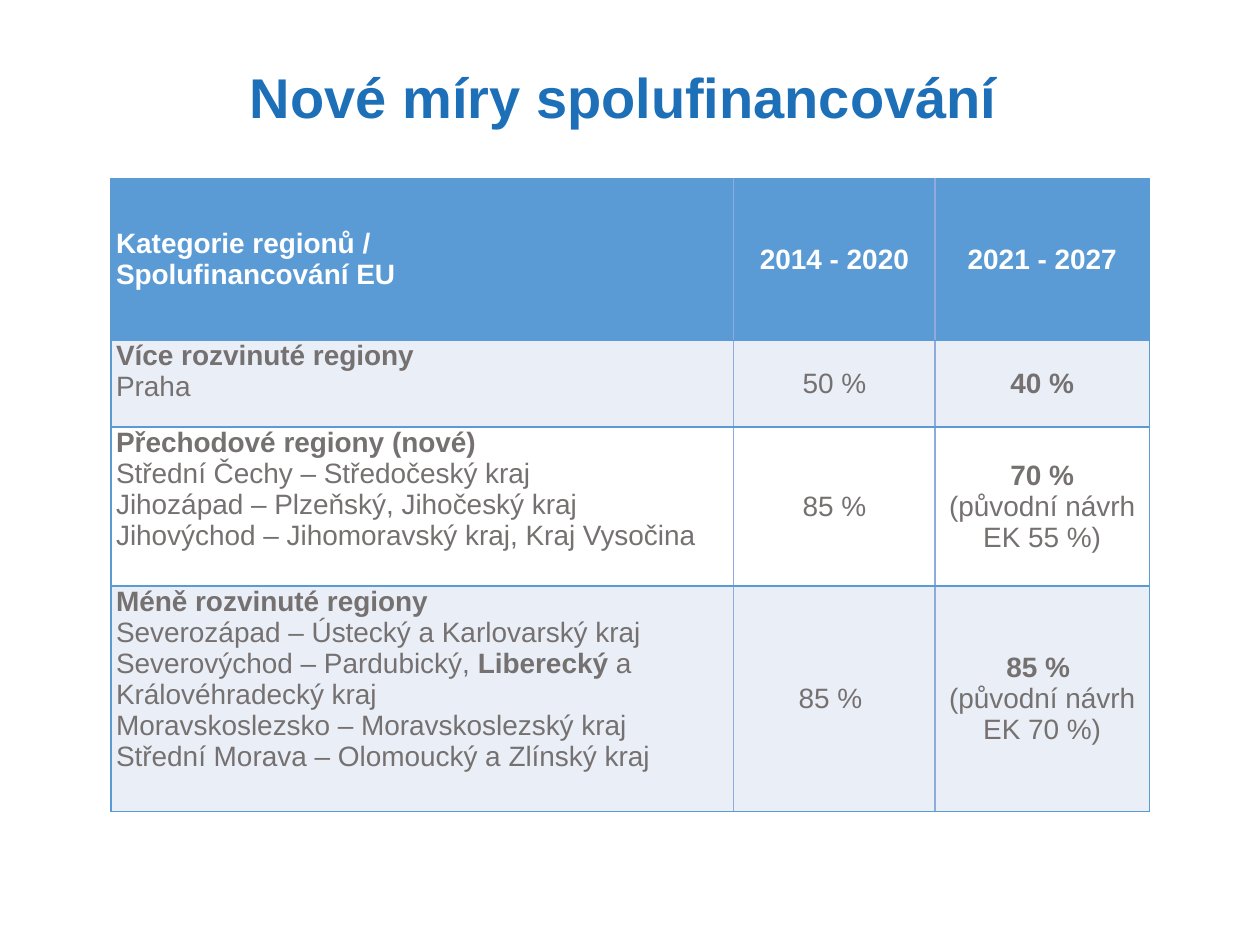
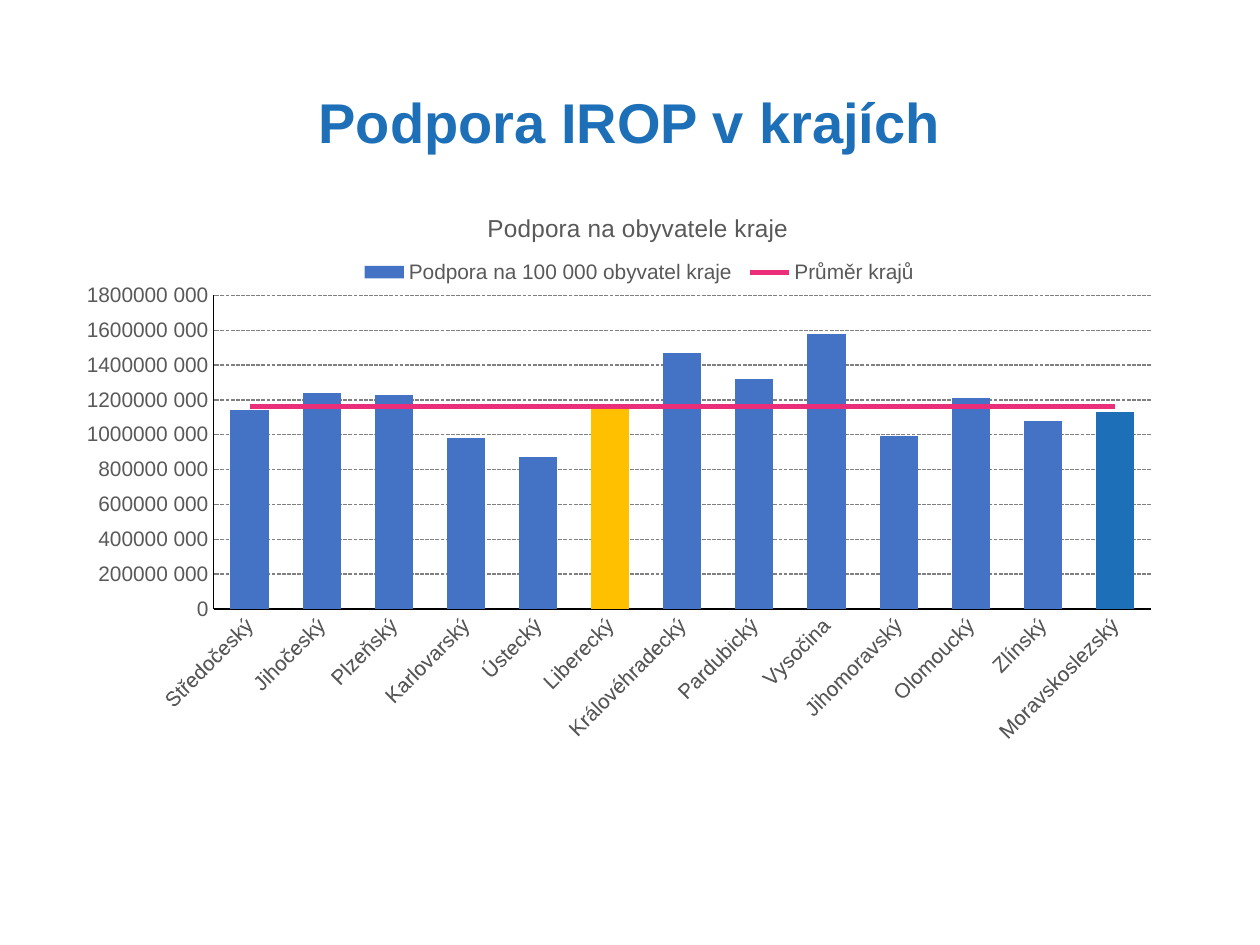
from dataclasses import dataclass

import pptx
import pptx.chart.data
import pptx.dml.color
import pptx.enum.chart
import pptx.enum.dml
import pptx.enum.text
import pptx.oxml
import pptx.oxml.ns
import pptx.util
from pptx.util import Cm

FONT = "Arial"
COLORS = {
    "title": "1D70B8",
    "header": "5B9BD5",
    "divider": "8FAADC",
    "band": "EAEFF7",
    "white": "FFFFFF",
    "body": "767171",
    "label": "595959",
    "black": "000000",
    "grid": "808080",
    "support": "4472C4",
    "liberecky": "FFC000",
    "average": "EA2E7A",
}
LEFT = pptx.enum.text.PP_ALIGN.LEFT
CENTER = pptx.enum.text.PP_ALIGN.CENTER
TOP = pptx.enum.text.MSO_ANCHOR.TOP
MIDDLE = pptx.enum.text.MSO_ANCHOR.MIDDLE


@dataclass(frozen=True)
class Box:
    left: float
    top: float
    width: float
    height: float

    def lengths(self) -> tuple:
        return Cm(self.left), Cm(self.top), Cm(self.width), Cm(self.height)


@dataclass(frozen=True)
class Run:
    text: str
    bold: bool = False


@dataclass(frozen=True)
class RegionRow:
    height: float
    cells: tuple
    fill: str = "band"
    color: str = "body"
    anchor: pptx.enum.text.MSO_ANCHOR = TOP


REGION_COLUMNS = (12.55, 4.06, 4.32)
REGION_ROWS = (
    RegionRow(
        3.25,
        (
            (Run("Kategorie regionů /", True), Run("Spolufinancování EU", True)),
            (Run("2014 - 2020", True),),
            (Run("2021 - 2027", True),),
        ),
        fill="header", color="white", anchor=MIDDLE,
    ),
    RegionRow(
        1.75,
        (
            (Run("Více rozvinuté regiony", True), Run("Praha")),
            (Run("50 %"),),
            (Run("40 %", True),),
        ),
    ),
    RegionRow(
        3.2,
        (
            (
                Run("Přechodové regiony (nové)", True),
                Run("Střední Čechy – Středočeský kraj"),
                Run("Jihozápad – Plzeňský, Jihočeský kraj"),
                Run("Jihovýchod – Jihomoravský kraj, Kraj Vysočina"),
            ),
            (Run("85 %"),),
            (Run("70 %", True), Run("(původní návrh EK 55 %)")),
        ),
        fill="white",
    ),
    RegionRow(
        4.55,
        (
            (
                Run("Méně rozvinuté regiony", True),
                Run("Severozápad – Ústecký a Karlovarský kraj"),
                (
                    Run("Severovýchod – Pardubický, "),
                    Run("Liberecký ", True),
                    Run("a Královéhradecký kraj\nMoravskoslezsko – Moravskoslezský kraj"),
                ),
                Run("Střední Morava – Olomoucký a Zlínský kraj"),
            ),
            (Run("85 % "),),
            (Run("85 % ", True), Run("(původní návrh EK 70 %)")),
        ),
    ),
)

SUPPORT_BY_REGION = {
    "Středočeský": 1140000000,
    "Jihočeský": 1240000000,
    "Plzeňský": 1230000000,
    "Karlovarský": 980000000,
    "Ústecký": 870000000,
    "Liberecký": 1150000000,
    "Královéhradecký": 1470000000,
    "Pardubický": 1320000000,
    "Vysočina": 1580000000,
    "Jihomoravský": 990000000,
    "Olomoucký": 1210000000,
    "Zlínský": 1080000000,
    "Moravskoslezský": 1130000000,
}
REGION_AVERAGE = 1160000000
HIGHLIGHTS = {"Liberecký": "liberecky", "Moravskoslezský": "title"}


def rgb(name: str) -> pptx.dml.color.RGBColor:
    return pptx.dml.color.RGBColor.from_string(COLORS[name])


def style_font(font, size: float, color: str, bold: bool = False) -> None:
    font.name = FONT
    font.size = pptx.util.Pt(size)
    font.bold = bold
    font.color.rgb = rgb(color)


def style_line(line, color: str, width: float) -> None:
    line.color.rgb = rgb(color)
    line.width = pptx.util.Pt(width)


def write_text(frame, paragraphs: tuple, *, size: float, color: str,
               align=LEFT, spacing: float = 1.0) -> None:
    for index, content in enumerate(paragraphs):
        paragraph = frame.add_paragraph() if index else frame.paragraphs[0]
        paragraph.alignment = align
        paragraph.line_spacing = spacing
        for part in content if isinstance(content, tuple) else (content,):
            for line_index, line in enumerate(part.text.split("\n")):
                if line_index:
                    paragraph.add_line_break()
                run = paragraph.add_run()
                run.text = line
                style_font(run.font, size, color, part.bold)


def add_title(slide, text: str, box: Box) -> None:
    frame = slide.shapes.add_textbox(*box.lengths()).text_frame
    frame.word_wrap = True
    frame.vertical_anchor = MIDDLE
    write_text(frame, (Run(text, True),), size=32, color="title", align=CENTER, spacing=0.9)


def add_border(cell, side: str, color: str) -> None:
    cell._tc.get_or_add_tcPr().append(pptx.oxml.parse_xml(
        f'<a:ln{side} {pptx.oxml.ns.nsdecls("a")} w="12700"><a:solidFill>'
        f'<a:srgbClr val="{COLORS[color]}"/></a:solidFill></a:ln{side}>'
    ))


def add_region_table(slide, box: Box) -> None:
    last = len(REGION_COLUMNS) - 1
    table = slide.shapes.add_table(len(REGION_ROWS), last + 1, *box.lengths()).table
    for column, width in zip(table.columns, REGION_COLUMNS):
        column.width = Cm(width)
    for row, region in zip(table.rows, REGION_ROWS):
        row.height = Cm(region.height)
        for index, (cell, content) in enumerate(zip(row.cells, region.cells)):
            cell.margin_left = cell.margin_right = Cm(0.1)
            cell.margin_top = cell.margin_bottom = 0
            cell.vertical_anchor = MIDDLE if index else region.anchor
            add_border(cell, "L", "divider" if index else "header")
            add_border(cell, "R", "divider" if index < last else "header")
            add_border(cell, "T", "header")
            add_border(cell, "B", "header")
            cell.fill.solid()
            cell.fill.fore_color.rgb = rgb(region.fill)
            write_text(cell.text_frame, content, size=16, color=region.color,
                       align=CENTER if index else LEFT)


def set_layout(part, position: int, inner: bool = False, **fractions: float) -> None:
    for old in part.findall(pptx.oxml.ns.qn("c:layout")):
        part.remove(old)
    target = '<c:layoutTarget val="inner"/>' if inner else ""
    modes = "".join(f'<c:{axis}Mode val="edge"/>' for axis in "xy")
    values = "".join(f'<c:{key} val="{value}"/>' for key, value in fractions.items())
    part.insert(position, pptx.oxml.parse_xml(
        f'<c:layout {pptx.oxml.ns.nsdecls("c")}><c:manualLayout>'
        f"{target}{modes}{values}</c:manualLayout></c:layout>"
    ))


def move_average_to_line(chart) -> None:
    bars = chart.plots[0]._element
    average = bars.findall(pptx.oxml.ns.qn("c:ser"))[1]
    for flag in average.findall(pptx.oxml.ns.qn("c:invertIfNegative")):
        average.remove(flag)
    axes = "".join(f'<c:axId val="{axis.get("val")}"/>'
                   for axis in bars.findall(pptx.oxml.ns.qn("c:axId")))
    lines = pptx.oxml.parse_xml(
        f'<c:lineChart {pptx.oxml.ns.nsdecls("c")}><c:grouping val="standard"/>'
        f'<c:varyColors val="0"/><c:marker val="1"/>{axes}</c:lineChart>'
    )
    lines.insert(2, average)
    bars.addnext(lines)


def style_axes(chart) -> None:
    for axis in (chart.category_axis, chart.value_axis):
        axis.major_tick_mark = axis.minor_tick_mark = pptx.enum.chart.XL_TICK_MARK.NONE
        style_font(axis.tick_labels.font, 12, "label")
        style_line(axis.format.line, "black", 0.75)
    labels = chart.category_axis._element.find(pptx.oxml.ns.qn("c:txPr"))
    labels.find(pptx.oxml.ns.qn("a:bodyPr")).set("rot", "-2700000")
    values = chart.value_axis
    values.minimum_scale, values.maximum_scale, values.major_unit = 0, 1800000000, 200000000
    values.tick_labels.number_format = "#\\ ##0"
    values.tick_labels.number_format_is_linked = False
    values.has_major_gridlines = True
    grid = values.major_gridlines.format.line
    style_line(grid, "grid", 0.75)
    grid.dash_style = pptx.enum.dml.MSO_LINE.SQUARE_DOT


def add_support_chart(slide, box: Box) -> None:
    data = pptx.chart.data.CategoryChartData()
    data.categories = list(SUPPORT_BY_REGION)
    data.add_series("Podpora na 100 000 obyvatel kraje", SUPPORT_BY_REGION.values())
    data.add_series("Průměr krajů", [REGION_AVERAGE] * len(SUPPORT_BY_REGION))
    chart = slide.shapes.add_chart(
        pptx.enum.chart.XL_CHART_TYPE.COLUMN_CLUSTERED, *box.lengths(), data).chart
    style_font(chart.font, 10, "black")
    move_average_to_line(chart)
    style_axes(chart)

    bars, lines = chart.plots
    bars.gap_width = 89
    bars.vary_by_categories = False
    support = bars.series[0]
    support.format.fill.solid()
    support.format.fill.fore_color.rgb = rgb("support")
    for index, region in enumerate(SUPPORT_BY_REGION):
        if region in HIGHLIGHTS:
            fill = support.points[index].format.fill
            fill.solid()
            fill.fore_color.rgb = rgb(HIGHLIGHTS[region])
    average = lines.series[0]
    average.smooth = False
    average.marker.style = pptx.enum.chart.XL_MARKER_STYLE.NONE
    style_line(average.format.line, "average", 2.75)

    chart.has_title = True
    write_text(chart.chart_title.text_frame, (Run("Podpora na obyvatele kraje"),),
               size=14, color="label", align=CENTER)
    chart.has_legend = True
    chart.legend.position = pptx.enum.chart.XL_LEGEND_POSITION.TOP
    chart.legend.include_in_layout = False
    style_font(chart.legend.font, 12, "label")
    set_layout(chart.chart_title._element, 1, x=0.36, y=0.04)
    set_layout(chart.legend._element, 1, x=0.24, y=0.12, w=0.53, h=0.06)
    set_layout(bars._element.getparent(), 0, inner=True, x=0.11, y=0.19, w=0.87, h=0.54)


def main() -> None:
    deck = pptx.Presentation()
    deck.slide_width, deck.slide_height = Cm(25.4), Cm(19.05)
    blank = deck.slide_layouts[6]

    rates = deck.slides.add_slide(blank)
    add_title(rates, "Nové míry spolufinancování", Box(1.68, 0.74, 21.79, 2.57))
    add_region_table(rates, Box(2.24, 3.61, 20.93, 12.75))

    support = deck.slides.add_slide(blank)
    add_title(support, "Podpora IROP v krajích", Box(1.75, 0.69, 21.89, 3.68))
    add_support_chart(support, Box(1.75, 3.73, 21.89, 11.71))

    deck.save("out.pptx")


if __name__ == "__main__":
    main()
